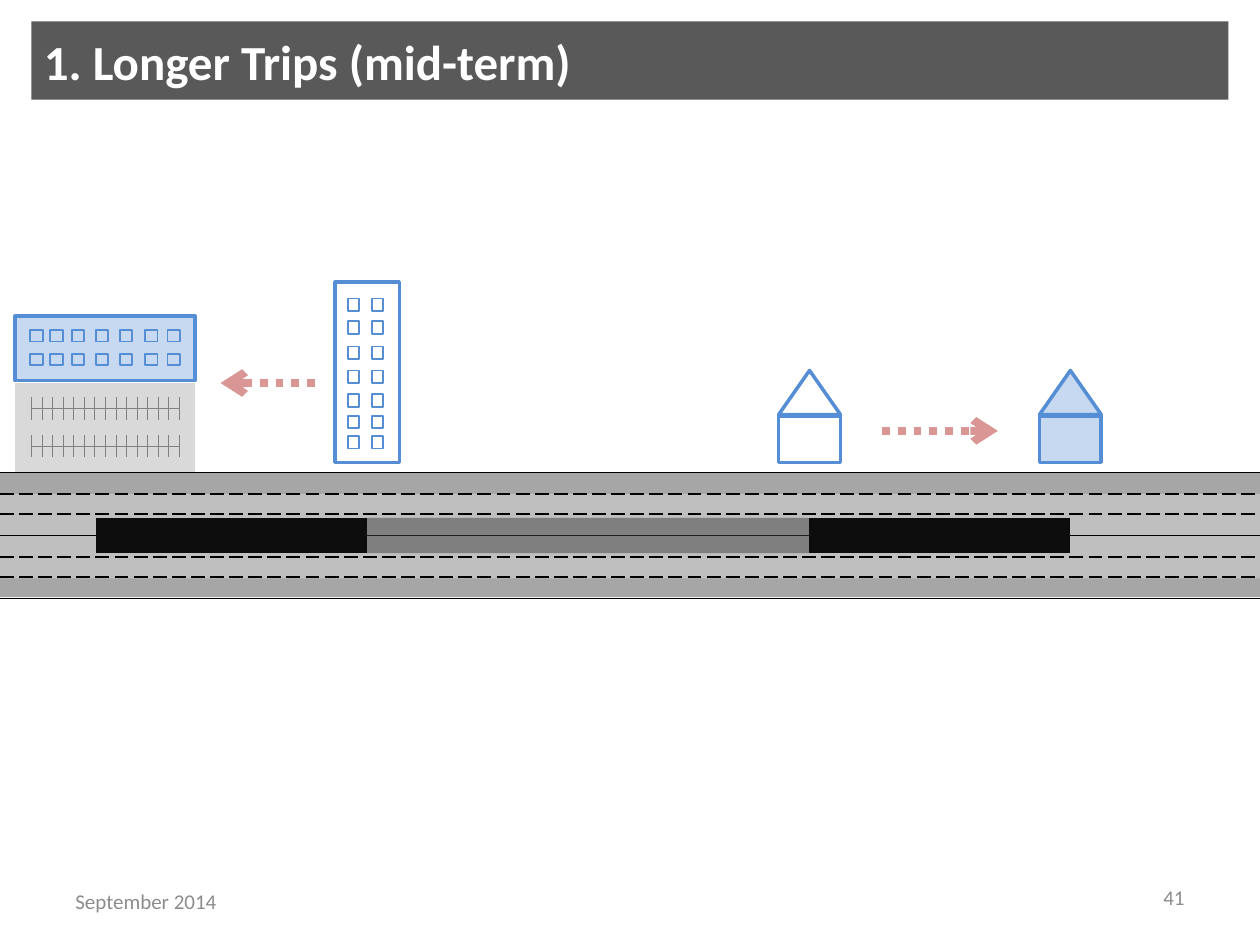
from dataclasses import dataclass

from lxml import etree
from pptx import Presentation
from pptx.dml.color import RGBColor
from pptx.enum.dml import MSO_LINE
from pptx.enum.shapes import MSO_CONNECTOR, MSO_SHAPE
from pptx.enum.text import MSO_ANCHOR, PP_ALIGN
from pptx.oxml.ns import qn
from pptx.util import Inches, Pt


@dataclass(frozen=True)
class Theme:
    font: str = "Calibri"
    title_size: float = 28
    footer_size: float = 12
    white: str = "FFFFFF"
    black: str = "000000"
    banner: str = "595959"
    footer: str = "8C8C8C"
    outer_lane: str = "A6A6A6"
    inner_lane: str = "BFBFBF"
    lot: str = "D9D9D9"
    stall: str = "808080"
    outline: str = "558ED5"
    new_building: str = "C6D9F1"
    trip: str = "0D0D0D"
    shorter_trip: str = "404040"
    move: str = "D99694"


THEME = Theme()
TITLE = "1. Longer Trips (mid-term)"
# text, left, top, alignment
FOOTERS = [
    ("41", 7.17, 6.92, PP_ALIGN.RIGHT),
    ("September 2014", 0.5, 6.95, PP_ALIGN.LEFT),
]
# top, height, colour
LANES = [
    (4.58, 0.16, THEME.outer_lane),
    (3.75, 0.17, THEME.outer_lane),
    (3.92, 0.67, THEME.inner_lane),
]
ROAD_TOP, ROAD_MIDDLE, ROAD_BOTTOM = 3.75, 4.25, 4.75
SOLID_LINES = [ROAD_TOP, ROAD_MIDDLE, ROAD_BOTTOM]
DASHED_LINES = [3.92, 4.08, 4.42, 4.58]
# start, end, colour, opacity in percent
TRIPS = [
    (2.91, 6.42, THEME.shorter_trip, 50),
    (6.42, 8.49, THEME.trip, 100),
    (0.76, 2.91, THEME.trip, 100),
]
# left, fill
HOUSES = [(6.18, None), (8.25, THEME.new_building)]
# start, end, height
MOVES = [(7, 7.92, 3.42), (2.5, 1.75, 3.04)]
# box, window size, window columns, window rows, fill
BUILDINGS = [
    ((2.66, 2.24, 0.51, 1.43), (0.09, 0.1), [2.76, 2.95],
     [2.37, 2.55, 2.75, 2.94, 3.13, 3.3, 3.46], None),
    ((0.12, 2.51, 1.43, 0.51), (0.1, 0.09),
     [0.24, 0.4, 0.57, 0.76, 0.95, 1.15, 1.33], [2.62, 2.81],
     THEME.new_building),
]
LOT = (0.12, 3.04, 1.43, 0.72)
STALL_ROWS = [3.24, 3.54]
STALL_LEFT, STALL_RIGHT, STALL_COUNT, STALL_HALF = 0.25, 1.42, 14, 0.09


def rgb(value):
    return RGBColor.from_string(value)


def add_box(shapes, box, fill=None, line=None, width=1, kind=MSO_SHAPE.RECTANGLE):
    sp = shapes.add_shape(kind, *map(Inches, box))
    sp.shadow.inherit = False
    if fill:
        sp.fill.solid()
        sp.fill.fore_color.rgb = rgb(fill)
    else:
        sp.fill.background()
    if line:
        sp.line.color.rgb = rgb(line)
        sp.line.width = Pt(width)
    else:
        sp.line.fill.background()
    return sp


def add_line(shapes, start, end, color, width, dash=None, opacity=100, arrow=False):
    cn = shapes.add_connector(MSO_CONNECTOR.STRAIGHT, *map(Inches, start + end))
    cn.line.color.rgb = rgb(color)
    cn.line.width = Pt(width)
    if dash:
        cn.line.dash_style = dash
    props = cn._element.spPr
    if opacity < 100:
        clr = props.find(".//" + qn("a:srgbClr"))
        etree.SubElement(clr, qn("a:alpha"), val=str(opacity * 1000))
    if arrow:
        etree.SubElement(props.find(qn("a:ln")), qn("a:tailEnd"), type="arrow")
    etree.SubElement(props, qn("a:effectLst"))


def set_text(sp, text, size, color, align, bold=False):
    tf = sp.text_frame
    tf.word_wrap = True
    tf.vertical_anchor = MSO_ANCHOR.MIDDLE
    tf.text = text
    p = tf.paragraphs[0]
    p.alignment = align
    font = p.runs[0].font
    font.name, font.size, font.bold = THEME.font, Pt(size), bold
    font.color.rgb = rgb(color)


def add_house(shapes, left, fill):
    house = shapes.add_group_shape().shapes
    add_box(house, (left, 3.3, 0.49, 0.37), fill, THEME.outline, 2)
    add_box(house, (left, 2.94, 0.49, 0.35), fill, THEME.outline, 2,
            MSO_SHAPE.ISOSCELES_TRIANGLE)


def add_building(shapes, box, window, columns, rows, fill):
    building = shapes.add_group_shape().shapes
    add_box(building, box, fill, THEME.outline, 2)
    for y in rows:
        for x in columns:
            add_box(building, (x, y, *window), fill, THEME.outline)


def add_stalls(shapes, y):
    stalls = shapes.add_group_shape().shapes
    add_line(stalls, (STALL_RIGHT, y), (STALL_LEFT, y), THEME.stall, 0.25)
    pitch = (STALL_RIGHT - STALL_LEFT) / STALL_COUNT
    for i in range(STALL_COUNT + 1):
        x = STALL_LEFT + i * pitch
        add_line(stalls, (x, y - STALL_HALF), (x, y + STALL_HALF), THEME.stall, 0.25)


def main():
    prs = Presentation()
    prs.slide_width, prs.slide_height = Inches(10), Inches(7.5)
    shapes = prs.slides.add_slide(prs.slide_layouts[6]).shapes

    add_box(shapes, LOT, THEME.lot)
    for top, height, color in LANES:
        add_box(shapes, (0, top, 10, height), color)
    banner = add_box(shapes, (0.25, 0.17, 9.5, 0.62), THEME.banner)
    set_text(banner, TITLE, THEME.title_size, THEME.white, PP_ALIGN.LEFT, True)

    for y in SOLID_LINES:
        add_line(shapes, (0, y), (10, y), THEME.black, 1)
    for y in DASHED_LINES:
        add_line(shapes, (0, y), (10, y), THEME.black, 1, MSO_LINE.LONG_DASH)
    for start, end, color, opacity in TRIPS:
        add_line(shapes, (start, ROAD_MIDDLE), (end, ROAD_MIDDLE), color, 20.25,
                 opacity=opacity)

    for house in HOUSES:
        add_house(shapes, *house)
    for building in BUILDINGS:
        add_building(shapes, *building)
    for y in STALL_ROWS:
        add_stalls(shapes, y)
    for start, end, y in MOVES:
        add_line(shapes, (start, y), (end, y), THEME.move, 4.5,
                 MSO_LINE.ROUND_DOT, arrow=True)

    for text, left, top, align in FOOTERS:
        sp = shapes.add_textbox(*map(Inches, (left, top, 2.33, 0.4)))
        set_text(sp, text, THEME.footer_size, THEME.footer, align)

    prs.save("out.pptx")


if __name__ == "__main__":
    main()
